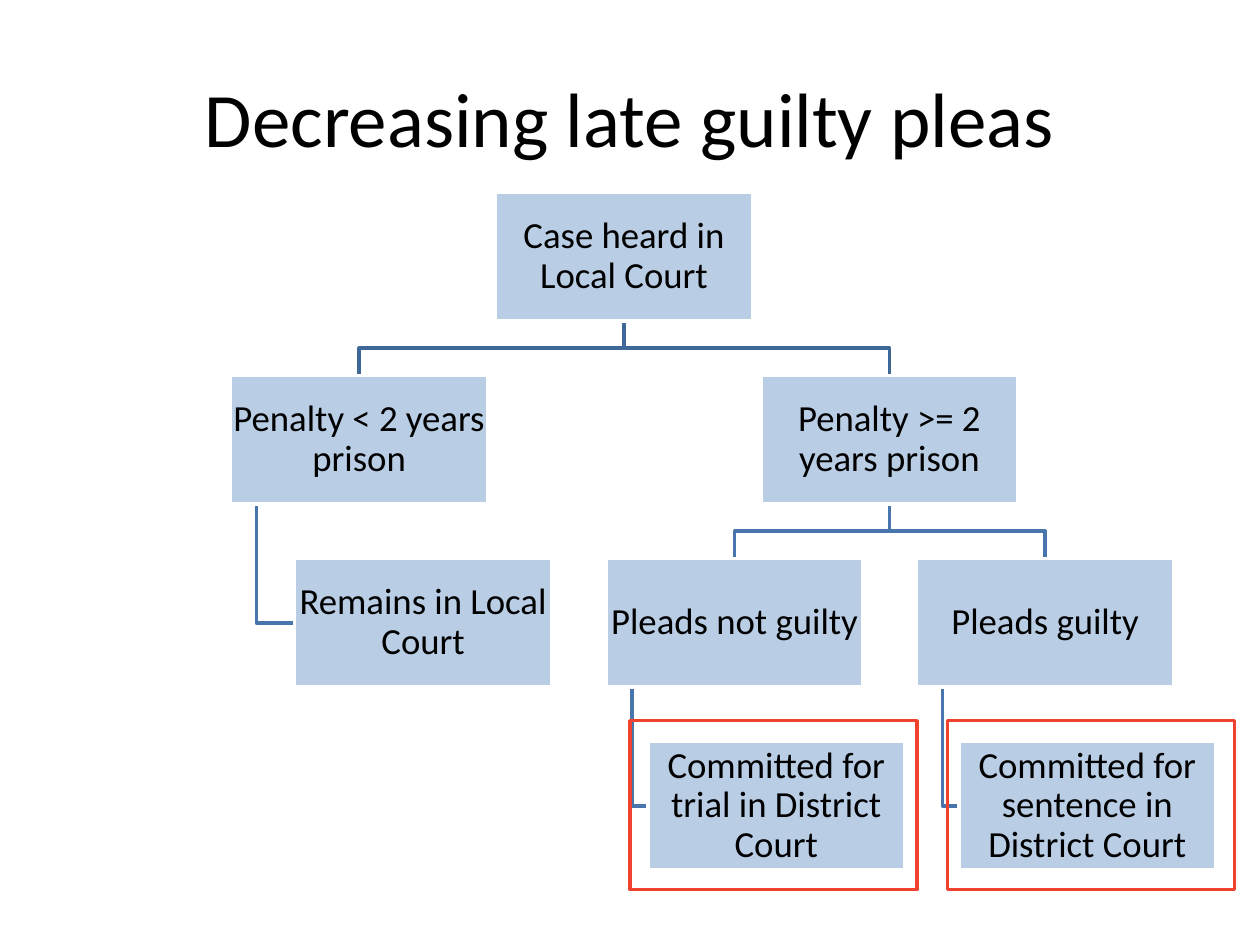
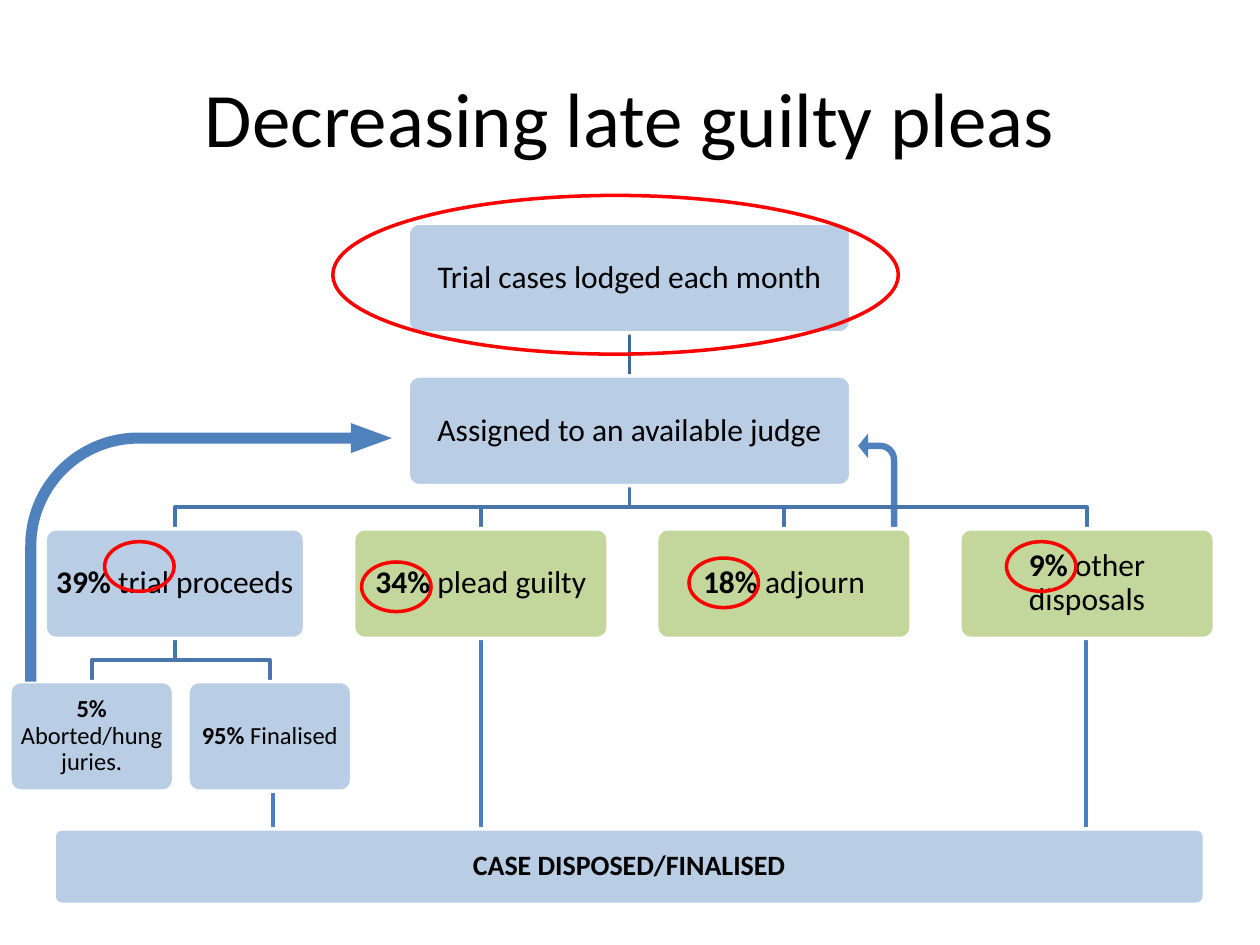
from dataclasses import dataclass

from lxml.etree import SubElement
from pptx import Presentation
from pptx.dml.color import RGBColor
from pptx.enum.shapes import MSO_CONNECTOR as Connector, MSO_SHAPE as Preset
from pptx.enum.text import MSO_ANCHOR as Anchor, PP_ALIGN as Align
from pptx.oxml.ns import qn
from pptx.util import Cm, Pt

COLOURS = {
    "black": "000000",
    "white": "FFFFFF",
    "box": "B9CDE5",
    "outcome": "C3D69B",
    "top link": "3F6797",
    "link": "4875AC",
    "drop": "4B7EBC",
    "arrow": "4F81BD",
    "frame": "F1412F",
    "ring": "FF0000",
}
FONT = "Calibri"
TITLE = "Decreasing late guilty pleas"


@dataclass
class Box:
    left: float
    top: float
    width: float
    height: float
    text: str
    lead: str = ""
    size: int = 18
    fill: str = "box"

    @property
    def centre(self):
        return self.left + self.width / 2

    @property
    def middle(self):
        return self.top + self.height / 2

    @property
    def bottom(self):
        return self.top + self.height


def colour(name):
    return RGBColor.from_string(COLOURS[name])


def write(frame, text, size, lead="", margins=None, spacing=None):
    frame.word_wrap = True
    frame.vertical_anchor = Anchor.MIDDLE
    if margins is not None:
        frame.margin_left = frame.margin_right = Cm(margins)
        frame.margin_top = frame.margin_bottom = Cm(margins)
    para = frame.paragraphs[0]
    para.text = lead or text
    para.runs[0].font.bold = bool(lead)
    if lead and text:
        para.add_run().text = text
    para.alignment = Align.CENTER
    para.line_spacing = spacing
    for span in para.runs:
        span.font.name = FONT
        span.font.size = Pt(size)
        span.font.color.rgb = colour("black")


def add_title(page):
    box = page.shapes.add_textbox(Cm(1.27), Cm(0.76), Cm(22.86), Cm(3.18))
    write(box.text_frame, TITLE, 44)


def add_preset(page, preset, left, top, width, height, fill=None, line=None):
    shape = page.shapes.add_shape(preset, Cm(left), Cm(top), Cm(width), Cm(height))
    shape.shadow.inherit = False
    if fill:
        shape.fill.solid()
        shape.fill.fore_color.rgb = colour(fill)
    else:
        shape.fill.background()
    if line:
        shape.line.color.rgb = colour(line)
        shape.line.width = Pt(2)
    else:
        shape.line.fill.background()
    return shape


def add_box(page, box, preset=Preset.ROUNDED_RECTANGLE, margins=0.15):
    shape = add_preset(page, preset, box.left, box.top, box.width, box.height,
                       box.fill, "white")
    if preset == Preset.ROUNDED_RECTANGLE:
        shape.adjustments[0] = 0.1
    write(shape.text_frame, box.text, box.size, box.lead, margins, 0.9)


def add_path(page, points, line):
    corners = [(Cm(x), Cm(y)) for x, y in points]
    builder = page.shapes.build_freeform(*corners[0])
    builder.add_line_segments(corners[1:], close=False)
    path = builder.convert_to_shape()
    path.shadow.inherit = False
    path.fill.background()
    path.line.color.rgb = colour(line)
    path.line.width = Pt(2)


def add_branches(page, parent, children, line="link"):
    for child in children:
        turn = (parent.bottom + child.top) / 2
        add_path(page, [(parent.centre, parent.bottom), (parent.centre, turn),
                        (child.centre, turn), (child.centre, child.top)], line)


def add_hanger(page, parent, child):
    stem = parent.left + parent.width / 10
    add_path(page, [(stem, parent.bottom), (stem, child.middle),
                    (child.left, child.middle)], "link")


def add_drop(page, x, top, bottom):
    drop = page.shapes.add_connector(Connector.STRAIGHT, Cm(x), Cm(top), Cm(x), Cm(bottom))
    drop.line.color.rgb = colour("drop")
    drop.line.width = Pt(2.25)
    SubElement(drop.element.spPr, qn("a:effectLst"))


def add_bent_arrow(page, left, top, width, height, adjustments, flipped=False):
    arrow = add_preset(page, Preset.BENT_ARROW, left, top, width, height, "arrow")
    for index, value in enumerate(adjustments):
        arrow.adjustments[index] = value
    if flipped:
        arrow.element.spPr.xfrm.set("flipH", "1")


def build_committal(page):
    def court_box(left, row, text):
        return Box(left, 3.88 + 3.69 * row, 5.18, 2.59, text, size=21)

    heard = court_box(9.99, 0, "Case heard in Local Court")
    minor = court_box(4.65, 1, "Penalty < 2 years prison")
    serious = court_box(15.34, 1, "Penalty >= 2 years prison")
    remains = court_box(5.94, 2, "Remains in Local Court")
    not_guilty = court_box(12.22, 2, "Pleads not guilty")
    guilty = court_box(18.48, 2, "Pleads guilty")
    trial = court_box(13.06, 3, "Committed for trial in District Court")
    sentence = court_box(19.33, 3, "Committed for sentence in District Court")

    add_title(page)
    add_branches(page, heard, [minor, serious], "top link")
    add_branches(page, serious, [not_guilty, guilty])
    for parent, child in [(minor, remains), (not_guilty, trial), (guilty, sentence)]:
        add_hanger(page, parent, child)
    for box in [heard, minor, remains, serious, not_guilty, trial, guilty, sentence]:
        add_box(page, box, Preset.RECTANGLE, 0.03)
    for left in (12.7, 19.1):
        add_preset(page, Preset.RECTANGLE, left, 14.53, 5.79, 3.4, line="frame")


def build_trial_flow(page):
    def flow_box(left, row, width, text, **style):
        return Box(left, 4.5 + 3.08 * row, width, 2.21, text, **style)

    lodged = flow_box(8.23, 0, 8.92, "Trial cases lodged each month")
    assigned = flow_box(8.23, 1, 8.92, "Assigned to an available judge")
    proceeds = flow_box(0.91, 2, 5.23, " trial proceeds", lead="39%")
    outcomes = [
        flow_box(7.13 + 6.11 * column, 2, 5.13, text, lead=share, fill="outcome")
        for column, (share, text) in enumerate(
            [("34%", " plead guilty"), ("18%", " adjourn"), ("9%", " other disposals")])
    ]
    trial_ends = [
        flow_box(0.2, 3, 3.3, "Aborted/hung juries.", lead="5% ", size=14),
        flow_box(3.79, 3, 3.3, " Finalised", lead="95%", size=14),
    ]
    disposed = Box(1.09, 16.71, 23.19, 1.52, "", lead="CASE DISPOSED/FINALISED", size=16)

    add_bent_arrow(page, 17.3, 8.74, 0.79, 2, (0.164, 0.315, 0.254, 0.438), True)
    for x, top in [(9.7, 12.52), (21.9, 12.52), (5.51, 15.32)]:
        add_drop(page, x, top, disposed.top)
    add_branches(page, lodged, [assigned], "top link")
    add_branches(page, assigned, [proceeds, *outcomes])
    add_branches(page, proceeds, trial_ends)
    for box in [lodged, assigned, proceeds, *trial_ends, *outcomes, disposed]:
        add_box(page, box)
    add_bent_arrow(page, 0.51, 8.53, 7.39, 5.21, (0.043, 0.058, 0.158, 0.438))
    add_title(page)
    for left, top in [(2.11, 10.92), (7.29, 11.33), (13.89, 11.25), (20.29, 10.92)]:
        add_preset(page, Preset.OVAL, left, top, 1.4, 1, line="ring")
    add_preset(page, Preset.OVAL, 6.71, 3.94, 11.4, 3.2, line="ring")


def main():
    deck = Presentation()
    deck.slide_width, deck.slide_height = Cm(25.4), Cm(19.05)
    blank = deck.slide_layouts[6]
    for build in (build_committal, build_trial_flow):
        build(deck.slides.add_slide(blank))
    deck.save("out.pptx")


if __name__ == "__main__":
    main()
